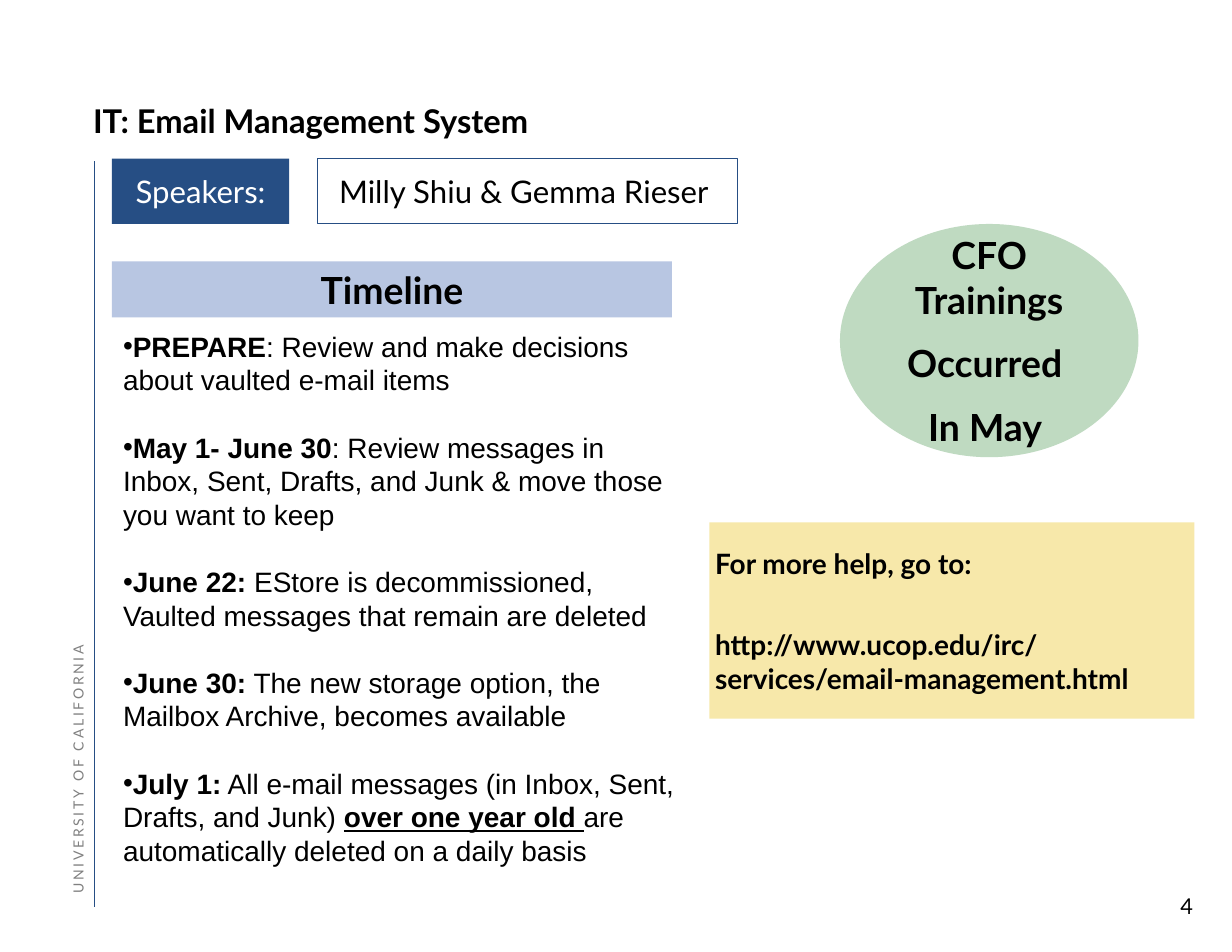
from lxml import etree
from pptx import Presentation
from pptx import util as u
from pptx.dml.color import RGBColor
from pptx.enum import shapes, text
from pptx.oxml import ns

NAVY = RGBColor(0x26, 0x4E, 0x84)
PALE_BLUE = RGBColor(0xB8, 0xC6, 0xE2)
GREEN = RGBColor(0xBF, 0xDA, 0xC1)
YELLOW = RGBColor(0xF7, 0xE8, 0xAA)
GREY = RGBColor(0x80, 0x80, 0x80)
BLACK = RGBColor(0, 0, 0)
WHITE = RGBColor(0xFF, 0xFF, 0xFF)
LEFT, CENTER, RIGHT = text.PP_ALIGN.LEFT, text.PP_ALIGN.CENTER, text.PP_ALIGN.RIGHT
TOP, MIDDLE, BOTTOM = text.MSO_ANCHOR.TOP, text.MSO_ANCHOR.MIDDLE, text.MSO_ANCHOR.BOTTOM
RECT, OVAL = shapes.MSO_SHAPE.RECTANGLE, shapes.MSO_SHAPE.OVAL

HEADING = "IT: Email Management System"
TIMELINE = [
    [("PREPARE", "b"), (": Review and make decisions about vaulted e-mail items", "")],
    [("May 1- June 30", "b"),
     (": Review messages in Inbox, Sent, Drafts, and Junk & move those you want to keep", "")],
    [("June 22:", "b"),
     (" EStore is decommissioned, Vaulted messages that remain are deleted", "")],
    [("June 30:", "b"), (" The new storage option, the Mailbox Archive, becomes available", "")],
    [("July 1:", "b"), (" All e-mail messages (in Inbox, Sent, Drafts, and Junk) ", ""),
     ("over one year old ", "bu"), ("are automatically deleted on a daily basis", "")],
]
PANELS = [
    dict(kind=RECT, at=(2.54, 3.6, 4.02, 1.48), fill=NAVY, lines=["Speakers:"],
         look=dict(size=20, color=WHITE, align=CENTER)),
    dict(kind=RECT, at=(7.2, 3.6, 9.53, 1.48), border=NAVY, lines=["Milly Shiu & Gemma Rieser"],
         look=dict(size=20, insets=(0.49, 0.13, 0.13, 0.13))),
    dict(kind=RECT, at=(2.54, 5.93, 12.7, 1.27), fill=PALE_BLUE, lines=["Timeline"],
         look=dict(size=24, bold=True, align=CENTER)),
    dict(kind=OVAL, at=(19.05, 5.08, 6.77, 5.29), fill=GREEN,
         lines=["CFO Trainings", "Occurred ", "In May "],
         look=dict(size=24, bold=True, align=CENTER, gaps=(12, 12))),
    dict(kind=RECT, at=(16.09, 11.85, 11, 4.45), fill=YELLOW,
         lines=["For more help, go to:", "http://www.ucop.edu/irc/",
                "services/email-management.html"],
         look=dict(size=18, bold=True, gaps=(30.6, 0))),
]


def place(part, at):
    part.left, part.top, part.width, part.height = map(u.Cm, at)


def write(part, lines, size=18, font="Lato", color=BLACK, bold=False, align=LEFT,
          anchor=MIDDLE, insets=(0.13, 0.13, 0.13, 0.13), gaps=(), leading=None,
          bullet=None, tracking=None):
    frame = part.text_frame
    frame.word_wrap = True
    frame.auto_size = text.MSO_AUTO_SIZE.NONE
    frame.vertical_anchor = anchor
    (frame.margin_left, frame.margin_top,
     frame.margin_right, frame.margin_bottom) = map(u.Cm, insets)
    for index, line in enumerate(lines):
        paragraph = frame.add_paragraph() if index else frame.paragraphs[0]
        if bullet:
            properties = paragraph._p.get_or_add_pPr()
            properties.set("marL", "0")
            properties.set("indent", "0")
            etree.SubElement(properties, ns.qn("a:buChar")).set("char", bullet)
        paragraph.alignment = align
        paragraph.space_before = u.Pt(gaps[index - 1] if index else 0)
        if leading:
            paragraph.line_spacing = u.Pt(leading)
        for words, style in [(line, "")] if isinstance(line, str) else line:
            run = paragraph.add_run()
            run.text = words
            run.font.name, run.font.size = font, u.Pt(size)
            run.font.color.rgb = color
            run.font.bold = bold or "b" in style
            run.font.underline = "u" in style
            if tracking:
                run._r.get_or_add_rPr().set("spc", str(tracking))


deck = Presentation()
deck.slide_width, deck.slide_height = u.Cm(27.94), u.Cm(21.59)
slide = deck.slides.add_slide(deck.slide_layouts[1])

margin_rule = slide.shapes.add_connector(
    shapes.MSO_CONNECTOR.STRAIGHT, u.Cm(2.13), u.Cm(3.66), u.Cm(2.13), u.Cm(20.57))
margin_rule.line.color.rgb = NAVY
margin_rule.line.width = u.Pt(0.35)
etree.SubElement(margin_rule._element.spPr, ns.qn("a:effectLst"))

page_number = slide.shapes.add_textbox(u.Cm(26.04), u.Cm(20.12), u.Cm(1.27), u.Cm(0.84))
write(page_number, ["4"], size=14, align=RIGHT, anchor=TOP, insets=(0.25, 0.13, 0.25, 0.13))

university = slide.shapes.add_textbox(u.Cm(-3.73), u.Cm(14.58), u.Cm(11), u.Cm(0.38))
university.rotation = 270
write(university, ["UNIVERSITY OF CALIFORNIA"], size=9, color=GREY, anchor=BOTTOM,
      insets=(0, 0, 0, 0), leading=12, tracking=174)

heading = slide.shapes.title
place(heading, (2.11, 1.47, 20.32, 1.7))
write(heading, [HEADING], size=21, bold=True, anchor=BOTTOM, insets=(0, 0, 0, 0), leading=27.9)

timeline = slide.placeholders[1]
place(timeline, (2.54, 7.42, 13.13, 13.21))
write(timeline, TIMELINE, font="Arial", anchor=TOP, insets=(0.25, 0.05, 0.25, 0.13),
      gaps=[21.6] * (len(TIMELINE) - 1), leading=21.6, bullet="•")

for panel in PANELS:
    box = slide.shapes.add_shape(panel["kind"], *map(u.Cm, panel["at"]))
    box.shadow.inherit = False
    if "fill" in panel:
        box.fill.solid()
        box.fill.fore_color.rgb = panel["fill"]
    else:
        box.fill.background()
    if "border" in panel:
        box.line.color.rgb = panel["border"]
        box.line.width = u.Pt(0.75)
    else:
        box.line.fill.background()
    write(box, panel["lines"], **panel["look"])

deck.save("out.pptx")
